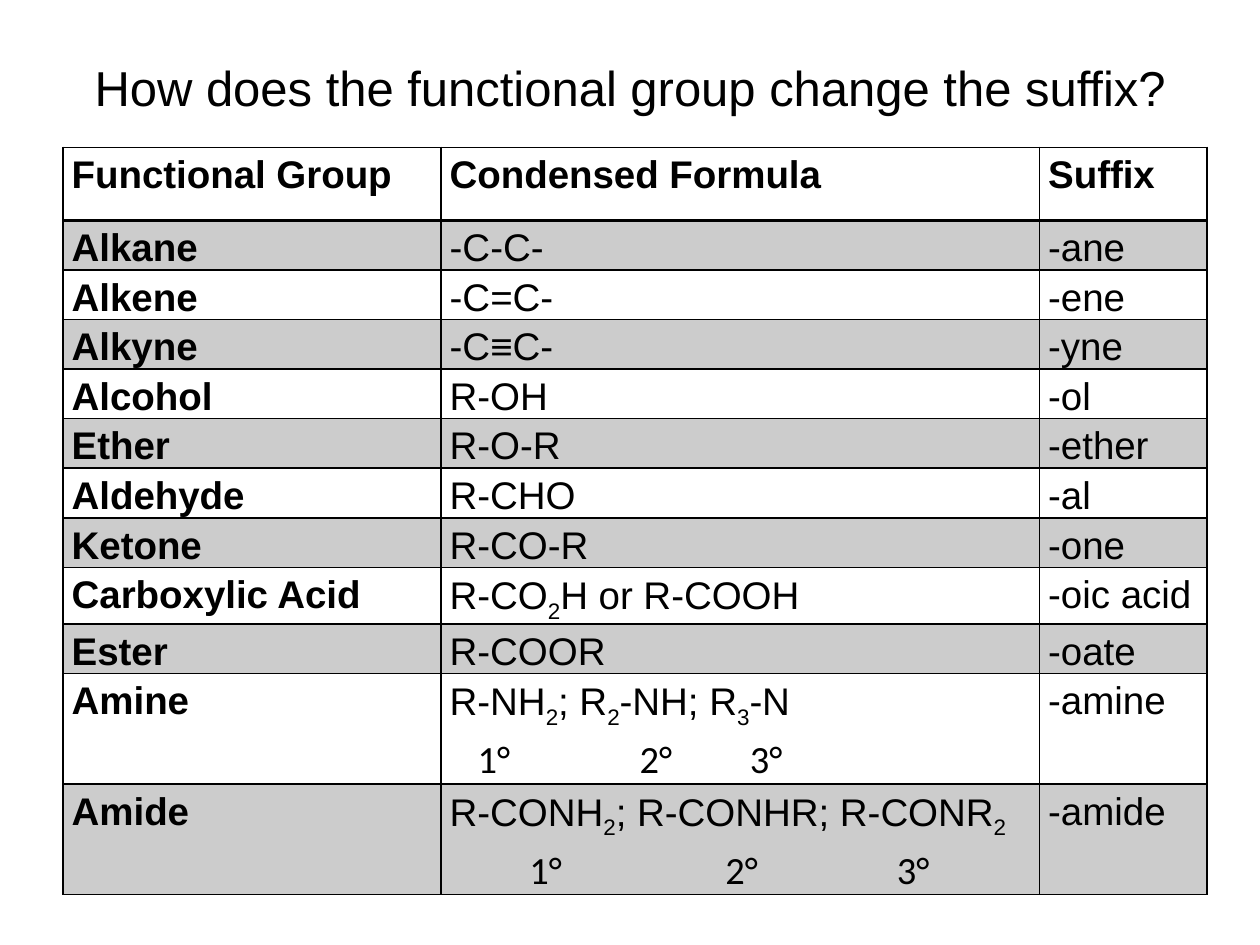
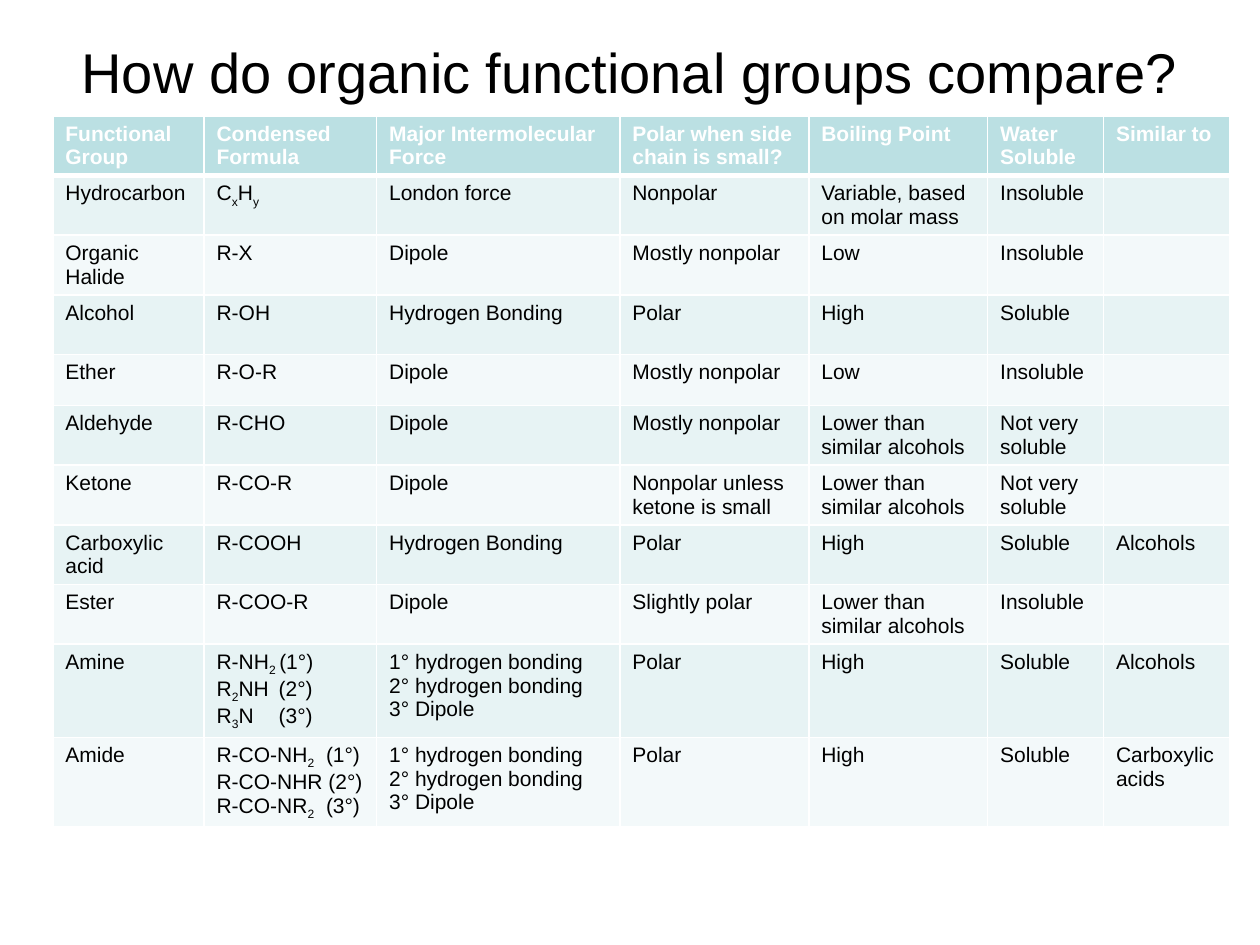
from lxml.etree import SubElement as Sub
from pptx import Presentation
from pptx.dml.color import RGBColor
from pptx.enum.text import MSO_ANCHOR as Anchor, MSO_AUTO_SIZE as Fit, PP_ALIGN as Align
from pptx.oxml.ns import qn
from pptx.util import Pt

BLACK = RGBColor(0, 0, 0)
WHITE = RGBColor(255, 255, 255)
GRAY = RGBColor(0xCC, 0xCC, 0xCC)
TEAL = RGBColor(0xBB, 0xE0, 0xE3)
PALE = RGBColor(0xE7, 0xF3, 0xF4)
FAINT = RGBColor(0xF3, 0xF9, 0xFA)
SANS = "Arial"
HAND = "Calibri"

SUFFIX = [
    ("Functional Group", "Condensed Formula", "Suffix"),
    ("Alkane", "-C-C-", "-ane"),
    ("Alkene", "-C=C-", "-ene"),
    ("Alkyne", "-C≡C-", "-yne"),
    ("Alcohol", "R-OH", "-ol"),
    ("Ether", "R-O-R", "-ether"),
    ("Aldehyde", "R-CHO", "-al"),
    ("Ketone", "R-CO-R", "-one"),
    ("Carboxylic Acid", "R-CO_2_H or R-COOH", "-oic acid"),
    ("Ester", "R-COOR", "-oate"),
    ("Amine", "R-NH_2_; R_2_-NH; R_3_-N\n\t1°\t2°\t3°", "-amine"),
    ("Amide", "R-CONH_2_; R-CONHR; R-CONR_2_\n\t1°\t2°\t3°", "-amide"),
]

BONDS = "1° hydrogen bonding\n2° hydrogen bonding\n3° Dipole"
LOWER = "Lower than similar alcohols"
TRAITS = [
    ("Functional Group", "Condensed Formula", "Major Intermolecular Force",
     "Polar when side chain is small?", "Boiling Point", "Water Soluble", "Similar to"),
    ("Hydrocarbon", "C_x_H_y_", "London force", "Nonpolar",
     "Variable, based on molar mass", "Insoluble", ""),
    ("Organic Halide", "R-X", "Dipole", "Mostly nonpolar", "Low", "Insoluble", ""),
    ("Alcohol", "R-OH", "Hydrogen Bonding", "Polar", "High", "Soluble", ""),
    ("Ether", "R-O-R", "Dipole", "Mostly nonpolar", "Low", "Insoluble", ""),
    ("Aldehyde", "R-CHO", "Dipole", "Mostly nonpolar", LOWER, "Not very soluble", ""),
    ("Ketone", "R-CO-R", "Dipole", "Nonpolar unless ketone is small",
     LOWER, "Not very soluble", ""),
    ("Carboxylic acid", "R-COOH", "Hydrogen Bonding", "Polar", "High",
     "Soluble", "Alcohols"),
    ("Ester", "R-COO-R", "Dipole", "Slightly polar", LOWER, "Insoluble", ""),
    ("Amine", "R-NH_2 _(1°)\nR_2_NH\t(2°)\nR_3_N\t(3°)", BONDS, "Polar", "High",
     "Soluble", "Alcohols"),
    ("Amide", "R-CO-NH_2_\t(1°)\nR-CO-NHR (2°)\nR-CO-NR_2_\t(3°)", BONDS, "Polar",
     "High", "Soluble", "Carboxylic acids"),
]


def set_tabs(para, stops):
    tabs = Sub(para._p.get_or_add_pPr(), qn("a:tabLst"))
    for stop in stops:
        Sub(tabs, qn("a:tab"), pos=str(Pt(stop)), algn="l")


def write(frame, text, size=12, color=BLACK, bold=False, align=Align.LEFT,
          space=None, stops=()):
    for num, line in enumerate(text.split("\n")):
        para = frame.add_paragraph() if num else frame.paragraphs[0]
        para.alignment = align
        if space:
            para.line_spacing = space
        if "\t" in line:
            set_tabs(para, stops)
        for part, piece in enumerate(line.split("_")):
            if not piece:
                continue
            run = para.add_run()
            run.text = piece
            font = run.font
            font.name = HAND if line.startswith("\t") else SANS
            font.size, font.bold = Pt(size), bold
            font.color.rgb = color
            if part % 2:
                font._element.set("baseline", "-25000")


def add_slide(deck, text, top, height, size):
    slide = deck.slides.add_slide(deck.slide_layouts[5])
    title = slide.shapes.title
    title.left, title.top = Pt(36), Pt(top)
    title.width, title.height = Pt(648), Pt(height)
    frame = title.text_frame
    frame.auto_size = Fit.NONE
    frame.vertical_anchor = Anchor.MIDDLE
    write(frame, text, size=size, align=Align.CENTER)
    return slide


def set_edges(cell, color, above, below):
    props = cell._tc.get_or_add_tcPr()
    for side, width in (("L", 1), ("R", 1), ("T", above), ("B", below)):
        edge = Sub(props, qn("a:ln" + side), w=str(Pt(width)))
        fill = Sub(edge, qn("a:solidFill"))
        Sub(fill, qn("a:srgbClr"), val=str(color))


def set_fill(cell, color):
    if color is None:
        cell.fill.background()
    else:
        cell.fill.solid()
        cell.fill.fore_color.rgb = color


def add_grid(slide, rows, left, top, widths, heights, fills, line, rule, ink=BLACK,
             lead=False, pad=None, stops={}, **form):
    head, *bands = fills
    grid = slide.shapes.add_table(len(rows), len(widths), Pt(left), Pt(top),
                                  Pt(sum(widths)), Pt(sum(heights))).table
    for col, width in zip(grid.columns, widths):
        col.width = Pt(width)
    for row, height in zip(grid.rows, heights):
        row.height = Pt(height)
    for r, texts in enumerate(rows):
        for c, text in enumerate(texts):
            cell = grid.cell(r, c)
            set_edges(cell, line, rule if r == 1 else 1, 1 if r else rule)
            set_fill(cell, bands[(r - 1) % 2] if r else head)
            if pad is not None:
                cell.margin_left = cell.margin_right = Pt(pad)
                cell.margin_top = cell.margin_bottom = 0
            write(cell.text_frame, text, color=BLACK if r else ink,
                  bold=r == 0 or (lead and c == 0),
                  stops=stops.get(texts[0], ()), **form)


def main():
    deck = Presentation()
    deck.slide_width, deck.slide_height = Pt(720), Pt(540)

    slide = add_slide(deck, "How does the functional group change the suffix?",
                      21.6, 56.2, 28)
    add_grid(slide, SUFFIX, 36, 84.2, [216, 342, 95.8], [41.8] + [28.1] * 11,
             (None, GRAY, None), BLACK, 2, lead=True, pad=5, size=22, space=1.15,
             stops={"Amine": (16, 108.5, 171.5), "Amide": (45.5, 157.5, 255.5)})

    slide = add_slide(deck, "How do organic functional groups compare?",
                      21.6, 38.2, 32)
    add_grid(slide, TRAITS, 30.2, 66.2, [86.4, 98.6, 139, 108, 102.2, 66.2, 72],
             [34] * 4 + [29.2] + [34] * 4 + [53, 51],
             (TEAL, PALE, FAINT), WHITE, 3, ink=WHITE, size=12,
             stops={"Amine": (35.5,), "Amide": (62.5,)})

    deck.save("out.pptx")


if __name__ == "__main__":
    main()
